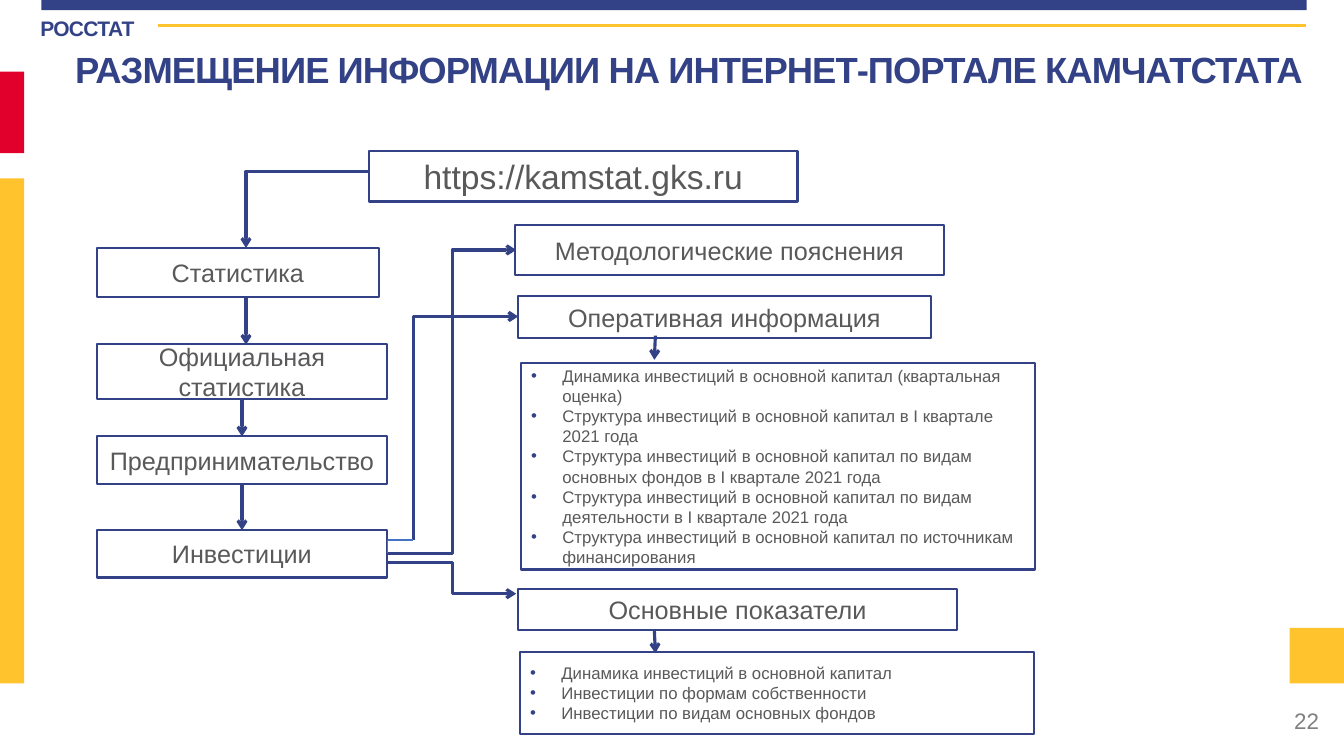
from dataclasses import dataclass
from typing import Any, Optional

import pptx
import pptx.dml.color
import pptx.enum.shapes
import pptx.enum.text
import pptx.oxml
import pptx.oxml.ns
import pptx.util

CELL = pptx.util.Inches(0.1)
NAVY, GOLD, RED, BLUE = "334286", "FFC32E", "E1002B", "4472C4"
TEXT_GREY, NUMBER_GREY = "595959", "808080"
Align = pptx.enum.text.PP_ALIGN
Anchor = pptx.enum.text.MSO_ANCHOR
Joint = pptx.enum.shapes.MSO_CONNECTOR


@dataclass(frozen=True)
class Area:
    column: float
    row: float
    columns: float
    rows: float


@dataclass(frozen=True)
class Label:
    area: Area
    text: str
    size: float
    colour: str
    align: Any
    anchor: Any = Anchor.TOP
    bold: bool = False
    tracking: int = 0
    line_spacing: float = 1.0
    inset: float = 1


@dataclass(frozen=True)
class Box:
    area: Area
    lines: tuple[str, ...]
    size: float = 18
    bulleted: bool = False


@dataclass(frozen=True)
class Link:
    start: tuple[float, float]
    end: tuple[float, float]
    preset: str = "line"
    colour: str = NAVY
    width: float = 2.25
    arrow: bool = True
    turned: bool = False
    joins: Optional[tuple[str, str]] = None


BARS = [
    (Area(4.1, 0, 125.5, 1), NAVY),
    (Area(0, 7.1, 2.4, 8.1), RED),
    (Area(0, 17.7, 2.4, 50.1), GOLD),
    (Area(127.9, 62.3, 5.4, 5.5), GOLD),
]

LABELS = [
    Label(Area(4, 1.5, 11.5, 3.2), "РОССТАТ", 15, NAVY, Align.LEFT,
          bold=True, tracking=-50, inset=0),
    Label(Area(2.6, 4.7, 131.5, 5.8),
          "РАЗМЕЩЕНИЕ ИНФОРМАЦИИ НА ИНТЕРНЕТ-ПОРТАЛЕ КАМЧАТСТАТА",
          26, NAVY, Align.CENTER, bold=True, tracking=-70, line_spacing=0.9),
    Label(Area(101.8, 69.5, 30, 4), "22", 16, NUMBER_GREY, Align.RIGHT, Anchor.MIDDLE),
]

BOXES = {
    "site": Box(Area(36.6, 15, 42.5, 5), ("https://kamstat.gks.ru",), 24),
    "statistics": Box(Area(9.6, 24.6, 28, 4.9), ("Статистика",)),
    "official": Box(Area(9.6, 34.1, 28.8, 5.5), ("Официальная статистика",)),
    "business": Box(Area(9.6, 43.3, 28.8, 4.7), ("Предпринимательство",)),
    "investment": Box(Area(9.6, 52.6, 28.8, 4.7), ("Инвестиции",)),
    "methodology": Box(Area(51.1, 22.3, 42.5, 5), ("Методологические пояснения",)),
    "current": Box(Area(51.4, 29.4, 40.9, 4.1), ("Оперативная информация",)),
    "current_topics": Box(Area(51.7, 36, 51, 20.5), (
        "Динамика инвестиций в основной капитал (квартальная оценка)",
        "Структура инвестиций в основной капитал в I квартале 2021 года",
        "Структура инвестиций в основной капитал по видам основных фондов в I квартале 2021 года",
        "Структура инвестиций в основной капитал по видам деятельности в I квартале 2021 года",
        "Структура инвестиций в основной капитал по источникам финансирования",
    ), 12, True),
    "indicators": Box(Area(51.4, 58.4, 43.5, 4.1), ("Основные показатели",)),
    "indicator_topics": Box(Area(51.6, 64.7, 51, 8.1), (
        "Динамика инвестиций в основной капитал",
        "Инвестиции по формам собственности",
        "Инвестиции по видам основных фондов",
    ), 12, True),
}

LINKS = [
    Link((15.7, 2.5), (129.5, 2.5), colour=GOLD, width=2, arrow=False),
    Link((36.6, 17), (24.4, 24.6), "bentConnector2"),
    Link((24.4, 29.5), (24.4, 34.2)),
    Link((24, 39.6), (24, 43.3), joins=("official", "business")),
    Link((24, 48), (24, 52.6), joins=("business", "investment")),
    Link((38.5, 55.8), (51.2, 58.9), "bentConnector3"),
    Link((38.5, 54.9), (51.2, 24.8), "bentConnector3"),
    Link((41, 53.6), (51.4, 31.4), "bentConnector2", turned=True),
    Link((65, 33.3), (64.9, 35.7)),
    Link((64.9, 62.5), (65, 64.8)),
    Link((38.4, 53.6), (38.4, 54.9), colour=BLUE, width=0.5, arrow=False),
    Link((38.5, 53.6), (41, 53.6), colour=BLUE, width=1.5, arrow=False),
]


def cells(*counts: float) -> list[int]:
    return [round(count * CELL) for count in counts]


def place(area: Area) -> list[int]:
    return cells(area.column, area.row, area.columns, area.rows)


def rgb(colour: str) -> pptx.dml.color.RGBColor:
    return pptx.dml.color.RGBColor.from_string(colour)


def apply(target: Any, values: dict[str, Any]) -> None:
    for name, value in values.items():
        setattr(target, name, value)


def add_xml(parent: Any, markup: str) -> None:
    tag, rest = (markup.split(" ", 1) + [""])[:2]
    namespace = pptx.oxml.ns.nsdecls("a")
    content = rest if rest else "/>"
    parent.append(pptx.oxml.parse_xml(f"<a:{tag} {namespace} {content}"))


def style_font(font: Any, size: float, colour: str, bold: bool = False) -> None:
    apply(font, {"name": "Arial", "size": pptx.util.Pt(size), "bold": bold})
    font.color.rgb = rgb(colour)


def draw_bar(slide: Any, area: Area, colour: str) -> None:
    bar = slide.shapes.add_shape(pptx.enum.shapes.MSO_SHAPE.RECTANGLE, *place(area))
    bar.shadow.inherit = False
    bar.fill.solid()
    bar.fill.fore_color.rgb = rgb(colour)
    bar.line.fill.background()


def draw_label(slide: Any, label: Label) -> None:
    frame = slide.shapes.add_textbox(*place(label.area)).text_frame
    margin_x, margin_y = cells(label.inset, label.inset / 2)
    apply(frame, {"word_wrap": True, "vertical_anchor": label.anchor,
                  "margin_left": margin_x, "margin_right": margin_x,
                  "margin_top": margin_y, "margin_bottom": margin_y})
    paragraph = frame.paragraphs[0]
    apply(paragraph, {"alignment": label.align, "line_spacing": label.line_spacing})
    run = paragraph.add_run()
    run.text = label.text
    style_font(run.font, label.size, label.colour, label.bold)
    if label.tracking:
        run.font._element.set("spc", str(label.tracking))


def draw_box(slide: Any, box: Box) -> Any:
    frame_box = slide.shapes.add_shape(pptx.enum.shapes.MSO_SHAPE.RECTANGLE, *place(box.area))
    frame_box.shadow.inherit = False
    frame_box.fill.background()
    frame_box.line.color.rgb = rgb(NAVY)
    frame_box.line.width = pptx.util.Pt(1.5)
    frame = frame_box.text_frame
    apply(frame, {"word_wrap": True, "vertical_anchor": Anchor.MIDDLE})
    for number, line in enumerate(box.lines):
        paragraph = frame.add_paragraph() if number else frame.paragraphs[0]
        paragraph.alignment = Align.LEFT if box.bulleted else Align.CENTER
        if box.bulleted:
            properties = paragraph._p.get_or_add_pPr()
            indent = cells(3.1)[0]
            properties.set("marL", str(indent))
            properties.set("indent", str(-indent))
            add_xml(properties, f'buClr ><a:srgbClr val="{NAVY}"/></a:buClr>')
            add_xml(properties, 'buFont typeface="Arial"/>')
            add_xml(properties, 'buChar char="•"/>')
        run = paragraph.add_run()
        run.text = line
        style_font(run.font, box.size, TEXT_GREY)
    return frame_box


def draw_link(slide: Any, link: Link, boxes: dict[str, Any]) -> None:
    (x1, y1), (x2, y2) = link.start, link.end
    if link.turned:
        middle_x, middle_y = (x1 + x2) / 2, (y1 + y2) / 2
        half_x, half_y = (x2 - x1) / 2, (y2 - y1) / 2
        x1, y1 = middle_x - half_y, middle_y + half_x
        x2, y2 = middle_x + half_y, middle_y - half_x
    kind = Joint.STRAIGHT if link.preset == "line" else Joint.ELBOW
    connector = slide.shapes.add_connector(kind, *cells(x1, y1, x2, y2))
    if link.joins:
        connector.begin_connect(boxes[link.joins[0]], 2)
        connector.end_connect(boxes[link.joins[1]], 0)
    connector.line.color.rgb = rgb(link.colour)
    connector.line.width = pptx.util.Pt(link.width)
    properties = connector.element.spPr
    properties.find(pptx.oxml.ns.qn("a:prstGeom")).set("prst", link.preset)
    if link.turned:
        properties.find(pptx.oxml.ns.qn("a:xfrm")).set("rot", str(90 * 60000))
    if link.arrow:
        add_xml(properties.find(pptx.oxml.ns.qn("a:ln")), 'tailEnd type="arrow"/>')
    add_xml(properties, "effectLst")


def main() -> None:
    deck = pptx.Presentation()
    apply(deck, {"slide_width": pptx.util.Inches(13.33), "slide_height": pptx.util.Inches(7.5)})
    slide = deck.slides.add_slide(deck.slide_layouts[6])
    for area, colour in BARS:
        draw_bar(slide, area, colour)
    for label in LABELS:
        draw_label(slide, label)
    boxes = {name: draw_box(slide, box) for name, box in BOXES.items()}
    for link in LINKS:
        draw_link(slide, link, boxes)
    deck.save("out.pptx")


if __name__ == "__main__":
    main()
